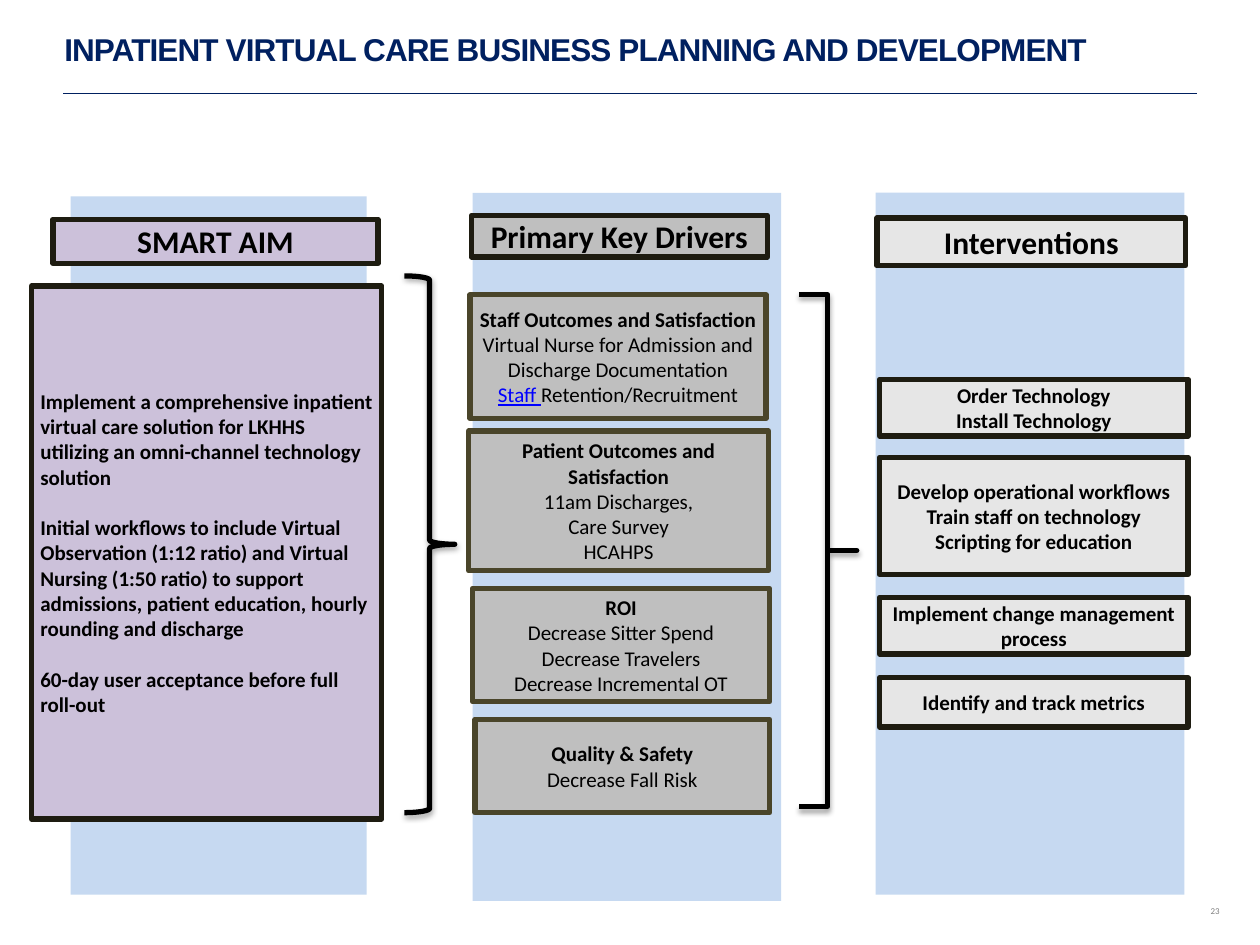
from dataclasses import dataclass

from lxml import etree
from pptx import Presentation
from pptx.dml.color import RGBColor
from pptx.enum.shapes import MSO_CONNECTOR, MSO_SHAPE
from pptx.enum.text import MSO_ANCHOR, PP_ALIGN
from pptx.oxml.ns import qn
from pptx.util import Inches, Pt


@dataclass(frozen=True)
class Theme:
    navy: str = "002060"
    column: str = "C6D9F1"
    aim: str = "CCC1DA"
    driver: str = "BFBFBF"
    action: str = "E6E6E6"
    dark: str = "1E1C11"
    olive: str = "4A452A"
    text: str = "000000"
    link: str = "0000FF"
    number: str = "808080"
    head_font: str = "Arial"
    body_font: str = "Calibri"
    head_size: float = 18
    body_size: float = 12
    number_size: float = 5.1
    border: float = 3


T = Theme()

COLUMNS = [
    (0.56, 1.56, 2.35, 5.54),
    (3.75, 1.53, 2.45, 5.62),
    (6.95, 1.53, 2.45, 5.57),
]
HEADINGS = [
    ("SMART AIM", (0.42, 1.74, 2.58, 0.35), T.aim),
    ("Primary Key Drivers", (3.74, 1.71, 2.35, 0.33), T.driver),
    ("Interventions", (6.96, 1.73, 2.45, 0.38), T.action),
]
AIM = [
    "Implement a comprehensive inpatient virtual care solution for LKHHS "
    "utilizing an omni-channel technology solution",
    "Initial workflows to include Virtual Observation (1:12 ratio) and Virtual "
    "Nursing (1:50 ratio) to support admissions, patient education, hourly "
    "rounding and discharge",
    "60-day user acceptance before full roll-out",
]
DRIVERS = [
    ((3.73, 2.34, 2.35, 0.98),
     ["Staff Outcomes and Satisfaction",
      "Virtual Nurse for Admission and Discharge Documentation"]),
    ((3.72, 3.42, 2.38, 1.11),
     ["Patient Outcomes and Satisfaction", "11am Discharges,", "Care Survey",
      "HCAHPS"]),
    ((3.75, 4.67, 2.36, 0.9),
     ["ROI", "Decrease Sitter Spend", "Decrease Travelers",
      "Decrease Incremental OT"]),
    ((3.77, 5.71, 2.34, 0.74), ["Quality & Safety", "Decrease Fall Risk"]),
]
INTERVENTIONS = [
    (3.01, 0.45, ["Order Technology", "Install Technology"]),
    (3.63, 0.93, ["Develop operational workflows", "Train staff on technology",
                  "Scripting for education"]),
    (4.74, 0.45, ["Implement change management process"]),
    (5.38, 0.39, ["Identify and track metrics"]),
]


def rgb(color):
    return RGBColor.from_string(color)


def style(font, size, color=T.text, bold=False, name=T.body_font):
    font.name, font.size, font.bold = name, Pt(size), bold
    font.color.rgb = rgb(color)


def set_margins(tf, side, top):
    tf.margin_left = tf.margin_right = Inches(side)
    tf.margin_top = tf.margin_bottom = Inches(top)


def add_shape(s, kind, box, fill=None, line=None):
    sp = s.shapes.add_shape(kind, *map(Inches, box))
    sp.shadow.inherit = False
    if fill:
        sp.fill.solid()
        sp.fill.fore_color.rgb = rgb(fill)
    else:
        sp.fill.background()
    if line:
        sp.line.color.rgb = rgb(line)
        sp.line.width = Pt(T.border)
    else:
        sp.line.fill.background()
    return sp


def add_box(s, box, lines, fill, line=T.dark, size=T.body_size,
            align=PP_ALIGN.CENTER, bold_lines=None, gap=0):
    """Bordered box; only the first bold_lines paragraphs are bold (all if None)."""
    sp = add_shape(s, MSO_SHAPE.RECTANGLE, box, fill, line)
    tf = sp.text_frame
    tf.word_wrap = True
    tf.vertical_anchor = MSO_ANCHOR.MIDDLE
    set_margins(tf, 0.07, 0.04)
    tf.text = "\n".join(lines)
    for i, p in enumerate(tf.paragraphs):
        p.alignment = align
        if i and gap:
            p.space_before = Pt(gap)
        for r in p.runs:
            style(r.font, size, bold=bold_lines is None or i < bold_lines)
    return sp


def add_retention_line(tf):
    p = tf.add_paragraph()
    p.alignment = PP_ALIGN.CENTER
    for text, color, underline in (("Staff ", T.link, True),
                                   ("Retention/Recruitment", T.text, False)):
        r = p.add_run()
        r.text = text
        style(r.font, T.body_size, color)
        r.font.underline = underline


def add_brace(s, box, curve=None):
    sp = add_shape(s, MSO_SHAPE.RIGHT_BRACE, box, line=T.text)
    if curve is not None:
        sp.adjustments[0] = curve
    effects = sp._element.spPr.find(qn("a:effectLst"))
    shadow = etree.SubElement(effects, qn("a:outerShdw"), blurRad=str(Pt(3.1)),
                              dist=str(Pt(1.8)), dir="5400000", rotWithShape="0")
    color = etree.SubElement(shadow, qn("a:srgbClr"), val=T.text)
    etree.SubElement(color, qn("a:alpha"), val="35000")


def add_title(s, text):
    title = s.shapes.title
    title.left, title.top, title.width, title.height = map(
        Inches, (0.44, 0.02, 8.59, 0.78))
    tf = title.text_frame
    tf.text = text
    tf.word_wrap = True
    tf.vertical_anchor = MSO_ANCHOR.MIDDLE
    set_margins(tf, 0.07, 0.04)
    p = tf.paragraphs[0]
    p.alignment, p.line_spacing = PP_ALIGN.LEFT, 0.9
    r = p.runs[0]
    style(r.font, T.head_size, T.navy, True, T.head_font)
    r.font._element.set("spc", "-50")


def add_rule(s):
    rule = s.shapes.add_connector(MSO_CONNECTOR.STRAIGHT, Inches(0.5),
                                  Inches(0.74), Inches(9.5), Inches(0.74))
    rule.line.color.rgb = rgb(T.navy)
    rule.line.width = Pt(0.75)
    etree.SubElement(rule._element.spPr, qn("a:effectLst"))


def add_page_number(s, text):
    tf = s.shapes.add_textbox(*map(Inches, (8.64, 7.14, 1.32, 0.19))).text_frame
    tf.word_wrap = True
    set_margins(tf, 0.28, 0.05)
    tf.text = text
    p = tf.paragraphs[0]
    p.alignment = PP_ALIGN.RIGHT
    style(p.runs[0].font, T.number_size, T.number)


def main():
    prs = Presentation()
    prs.slide_width, prs.slide_height = Inches(10), Inches(7.5)
    s = prs.slides.add_slide(prs.slide_layouts[5])

    add_rule(s)
    add_page_number(s, "23")
    add_title(s, "INPATIENT VIRTUAL CARE BUSINESS PLANNING AND DEVELOPMENT")
    for box in COLUMNS:
        add_shape(s, MSO_SHAPE.RECTANGLE, box, T.column)
    for text, box, fill in HEADINGS:
        add_box(s, box, [text], fill, size=T.head_size)

    add_box(s, (0.25, 2.27, 2.78, 4.23), AIM, T.aim, align=PP_ALIGN.LEFT, gap=14.5)
    drivers = [add_box(s, box, lines, T.driver, T.olive, bold_lines=1)
               for box, lines in DRIVERS]
    add_retention_line(drivers[0].text_frame)
    for top, height, lines in INTERVENTIONS:
        add_box(s, (6.98, top, 2.45, height), lines, T.action)

    add_brace(s, (3.21, 2.19, 0.4, 4.26))
    add_brace(s, (6.34, 2.34, 0.46, 4.06), curve=0)
    prs.save("out.pptx")


if __name__ == "__main__":
    main()
